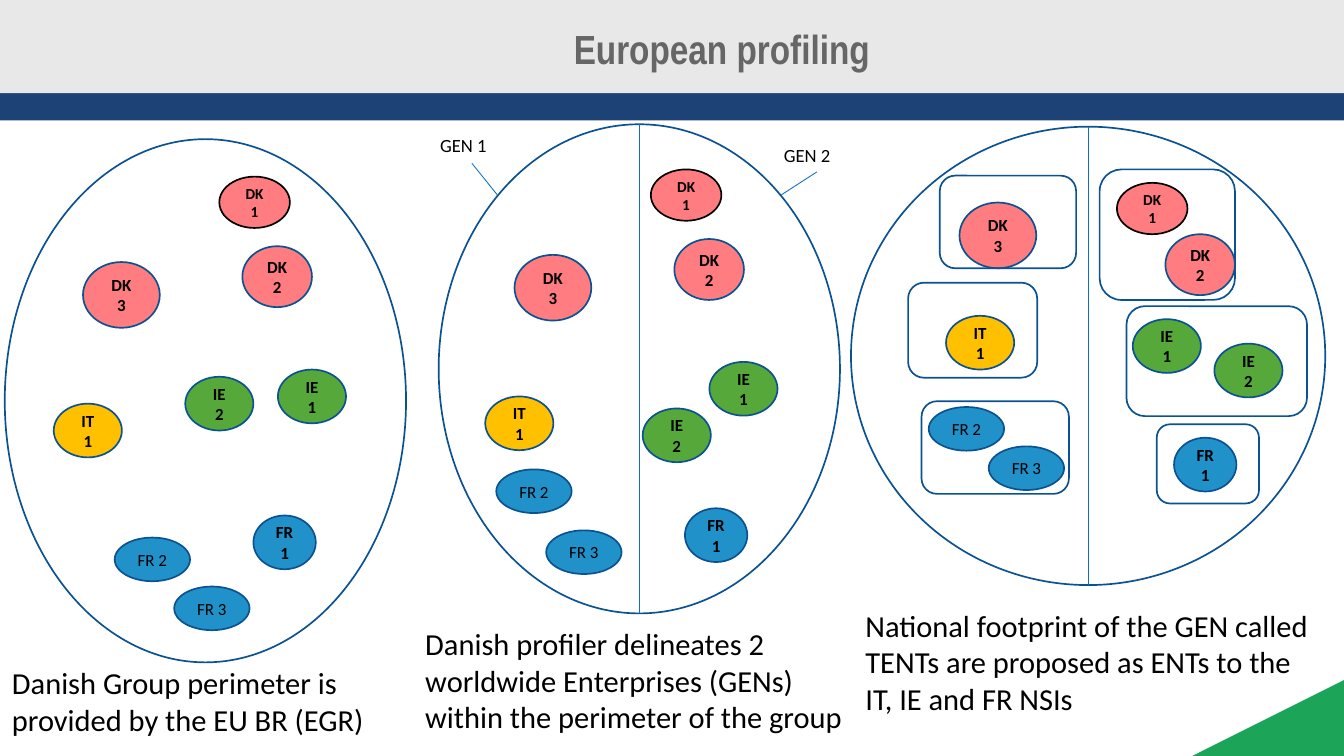
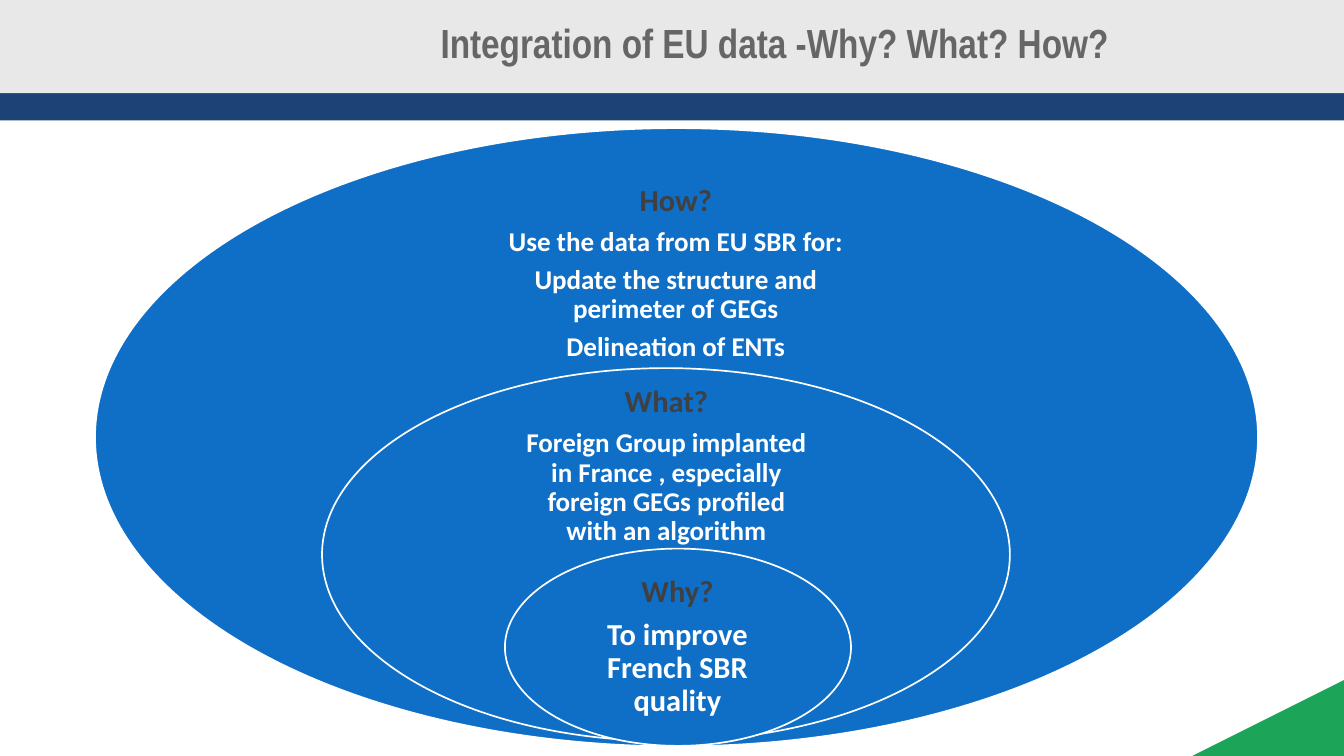
"""Build two slides on European profiling and the integration of EU data."""
from lxml import etree
from pptx import Presentation
from pptx.dml.color import RGBColor
from pptx.enum.shapes import MSO_CONNECTOR, MSO_SHAPE
from pptx.enum.text import MSO_ANCHOR, MSO_AUTO_SIZE, PP_ALIGN
from pptx.oxml.ns import qn
from pptx.util import Cm, Pt

OVAL, ROUNDED, RECTANGLE = MSO_SHAPE.OVAL, MSO_SHAPE.ROUNDED_RECTANGLE, MSO_SHAPE.RECTANGLE
STRAIGHT = MSO_CONNECTOR.STRAIGHT
TOP, MIDDLE = MSO_ANCHOR.TOP, MSO_ANCHOR.MIDDLE
LEFT, CENTER = PP_ALIGN.LEFT, PP_ALIGN.CENTER
NO_FIT = MSO_AUTO_SIZE.NONE

WIDTH, HEIGHT = 28, 15.75
TITLE_FONT, BODY_FONT = "Arial Narrow", "Calibri"
COLORS = {
    "header": "E8E8E8", "band": "1D4276", "corner": "1CA459", "title": "666666",
    "outline": "0B5292", "blue": "0F6FC6", "black": "000000", "white": "FFFFFF",
    "heading": "404040", "DK": "FF7C80", "IT": "FFC000", "IE": "55A839", "FR": "2191C9",
}

UNITS = {
    "DK 1": (1.47, 1.07), "DK 2": (1.45, 1.27), "DK 3": (1.6, 1.37),
    "IT 1": (1.42, 1.12), "IE 1": (1.42, 1.12), "IE 2": (1.42, 1.12),
    "FR 1": (1.3, 1.12), "FR 2": (1.57, 0.91), "FR 3": (1.57, 0.91),
}
ONE_LINE_UNITS = ("FR 2", "FR 3")

PANELS = [
    {
        "group": (0.1, 2.9, 8.36, 10.9),
        "divided": False,
        "units": {
            "DK 1": (4.57, 3.68), "DK 2": (5.05, 5.13), "DK 3": (1.73, 5.46),
            "IT 1": (1.12, 8.41), "IE 1": (5.79, 7.7), "IE 2": (3.86, 7.85),
            "FR 1": (5.28, 10.74), "FR 2": (2.39, 11.2), "FR 3": (3.63, 12.22),
        },
        "tents": [],
        "caption": ("Danish Group perimeter is provided by the EU BR (EGR)",
                    (0, 13.72, 8.15, 1.8)),
    },
    {
        "group": (9.14, 2.59, 8.36, 10.19),
        "divided": True,
        "units": {
            "DK 1": (13.56, 3.53), "DK 2": (14.05, 4.98), "DK 3": (10.72, 5.31),
            "IT 1": (10.11, 8.26), "IE 1": (14.78, 7.54), "IE 2": (13.39, 8.51),
            "FR 1": (14.27, 10.59), "FR 2": (10.34, 9.78), "FR 3": (11.38, 11.05),
        },
        "tents": [],
        "caption": ("Danish profiler delineates 2 worldwide Enterprises (GENs) "
                    "within the perimeter of the group", (8.61, 12.9, 9.86, 2.57)),
    },
    {
        "group": (17.73, 2.64, 9.88, 9.55),
        "divided": True,
        "units": {
            "DK 1": (23.27, 3.81), "DK 2": (24.28, 4.88), "DK 3": (19.99, 4.22),
            "IT 1": (19.71, 6.58), "IE 1": (23.6, 6.65), "IE 2": (25.3, 7.16),
            "FR 1": (24.46, 9.12), "FR 2": (19.35, 8.48), "FR 3": (20.6, 9.3),
        },
        "tents": [
            (19.58, 3.66, 2.84, 1.93), (18.92, 5.89, 2.69, 1.98), (19.2, 8.36, 3.07, 1.93),
            (22.91, 3.53, 2.82, 2.72), (23.47, 6.38, 3.76, 2.29), (24.1, 8.84, 2.13, 1.65),
        ],
        "caption": ("National footprint of the GEN called TENTs are proposed as ENTs "
                    "to the IT, IE and FR NSIs", (17.78, 12.52, 9.86, 2.57)),
    },
]

GEN_LABELS = [
    ("GEN 1", (8.92, 2.67, 1.85, 0.74), (9.83, 3.4, 10.36, 4.06)),
    ("GEN 2", (16.08, 2.87, 1.85, 0.74), (17.02, 3.58, 16.28, 4.06)),
]

QUESTIONS = [
    {"oval": (1.98, 2.67, 24.23, 12.88), "text": (10.08, 3.86, 8, 4), "size": 16,
     "heading": "How?",
     "answers": ["Use the data from EU SBR for:",
                 "Update the structure and perimeter of GEGs", "Delineation of ENTs"]},
    {"oval": (6.71, 7.67, 14.33, 7.77), "text": (10.85, 8.05, 6.07, 3.4), "size": 16,
     "heading": "What?",
     "answers": ["Foreign Group implanted in France , especially foreign GEGs "
                 "profiled with an algorithm"]},
    {"oval": (10.52, 11.43, 7.21, 4.11), "text": (11.92, 12, 4.39, 3.2), "size": 18,
     "heading": "Why?",
     "answers": ["To improve French SBR quality"]},
]


def rgb(name):
    return RGBColor.from_string(COLORS[name])


def lengths(values):
    return [Cm(value) for value in values]


def style(paragraph, size, color, bold=False, font=BODY_FONT, align=LEFT):
    paragraph.alignment = align
    paragraph.font.name = font
    paragraph.font.size = Pt(size)
    paragraph.font.bold = bold
    paragraph.font.color.rgb = rgb(color)


def paint(shape, fill=None, line=None):
    shape.shadow.inherit = False
    if fill:
        shape.fill.solid()
        shape.fill.fore_color.rgb = rgb(fill)
    else:
        shape.fill.background()
    if line:
        shape.line.color.rgb = rgb(line)
        shape.line.width = Pt(1)
    else:
        shape.line.fill.background()
    return shape


def add_shape(page, kind, place, fill=None, line=None):
    return paint(page.shapes.add_shape(kind, *lengths(place)), fill, line)


def add_line(page, ends):
    line = page.shapes.add_connector(STRAIGHT, *lengths(ends))
    line.line.color.rgb = rgb("blue")
    line.line.width = Pt(0.5)
    etree.SubElement(line.element.find(qn("p:spPr")), qn("a:effectLst"))


def add_text(page, text, place, size):
    frame = page.shapes.add_textbox(*lengths(place)).text_frame
    frame.word_wrap = True
    frame.text = text
    style(frame.paragraphs[0], size, "black")


def add_unit(page, name, position):
    unit = add_shape(page, OVAL, position + UNITS[name], name[:2],
                     "black" if name == "DK 1" else "outline")
    one_line = name in ONE_LINE_UNITS
    frame = unit.text_frame
    frame.word_wrap = not one_line
    frame.text = name
    style(frame.paragraphs[0], 9 if name == "DK 1" else 10, "black", not one_line, align=CENTER)


def decorate_master(deck, page):
    """Draw the header, band and corner, then move them to the slide master."""
    builder = page.shapes.build_freeform(Cm(WIDTH), Cm(14.17))
    builder.add_line_segments([(Cm(24.84), Cm(HEIGHT)), (Cm(WIDTH), Cm(HEIGHT))])
    parts = [
        paint(builder.convert_to_shape(), "corner"),
        add_shape(page, RECTANGLE, (0, 1.94, WIDTH, 0.57), "band"),
        add_shape(page, RECTANGLE, (0, 0, WIDTH, 1.94), "header"),
    ]
    tree = deck.slide_master.placeholders[0].element.getparent()
    for index, part in enumerate(parts, start=2):
        tree.insert(index, part.element)


def add_page(deck, title, place):
    page = deck.slides.add_slide(deck.slide_layouts[5])
    box = page.shapes.title
    box.left, box.top, box.width, box.height = lengths(place)
    frame = box.text_frame
    frame.auto_size = NO_FIT
    frame.vertical_anchor = MIDDLE
    frame.margin_left = frame.margin_right = frame.margin_top = frame.margin_bottom = 0
    frame.text = title
    style(frame.paragraphs[0], 24, "title", True, TITLE_FONT, CENTER)
    return page


def add_panel(page, panel):
    group = panel["group"]
    add_shape(page, OVAL, group, line="outline")
    for name, position in panel["units"].items():
        add_unit(page, name, position)
    for tent in panel["tents"]:
        add_shape(page, ROUNDED, tent, line="outline")
    if panel["divided"]:
        left, top, width, height = group
        middle = left + width / 2
        add_line(page, (middle, top, middle, top + height))
    add_text(page, *panel["caption"], 18)


def add_question(page, question):
    add_shape(page, OVAL, question["oval"], "blue", "white")
    frame = page.shapes.add_textbox(*lengths(question["text"])).text_frame
    frame.word_wrap = True
    frame.vertical_anchor = TOP
    frame.margin_left = frame.margin_right = frame.margin_top = frame.margin_bottom = 0
    frame.text = "\n".join([question["heading"], *question["answers"]])
    for index, paragraph in enumerate(frame.paragraphs):
        size, color, after = (question["size"], "white", 5) if index else (18, "heading", 6)
        style(paragraph, size, color, True, align=CENTER)
        paragraph.line_spacing = 0.9
        paragraph.space_after = Pt(after)


def main():
    deck = Presentation()
    deck.slide_width, deck.slide_height = Cm(WIDTH), Cm(HEIGHT)

    profiling = add_page(deck, "European profiling", (2.08, 0, 25.92, 2))
    decorate_master(deck, profiling)
    for panel in PANELS:
        add_panel(profiling, panel)
    for name, place, ends in GEN_LABELS:
        add_text(profiling, name, place, 11)
        add_line(profiling, ends)

    integration = add_page(deck, "Integration of EU data -Why? What? How?",
                           (4.28, 0, 23.72, 1.75))
    for question in QUESTIONS:
        add_question(integration, question)

    deck.save("out.pptx")


if __name__ == "__main__":
    main()
